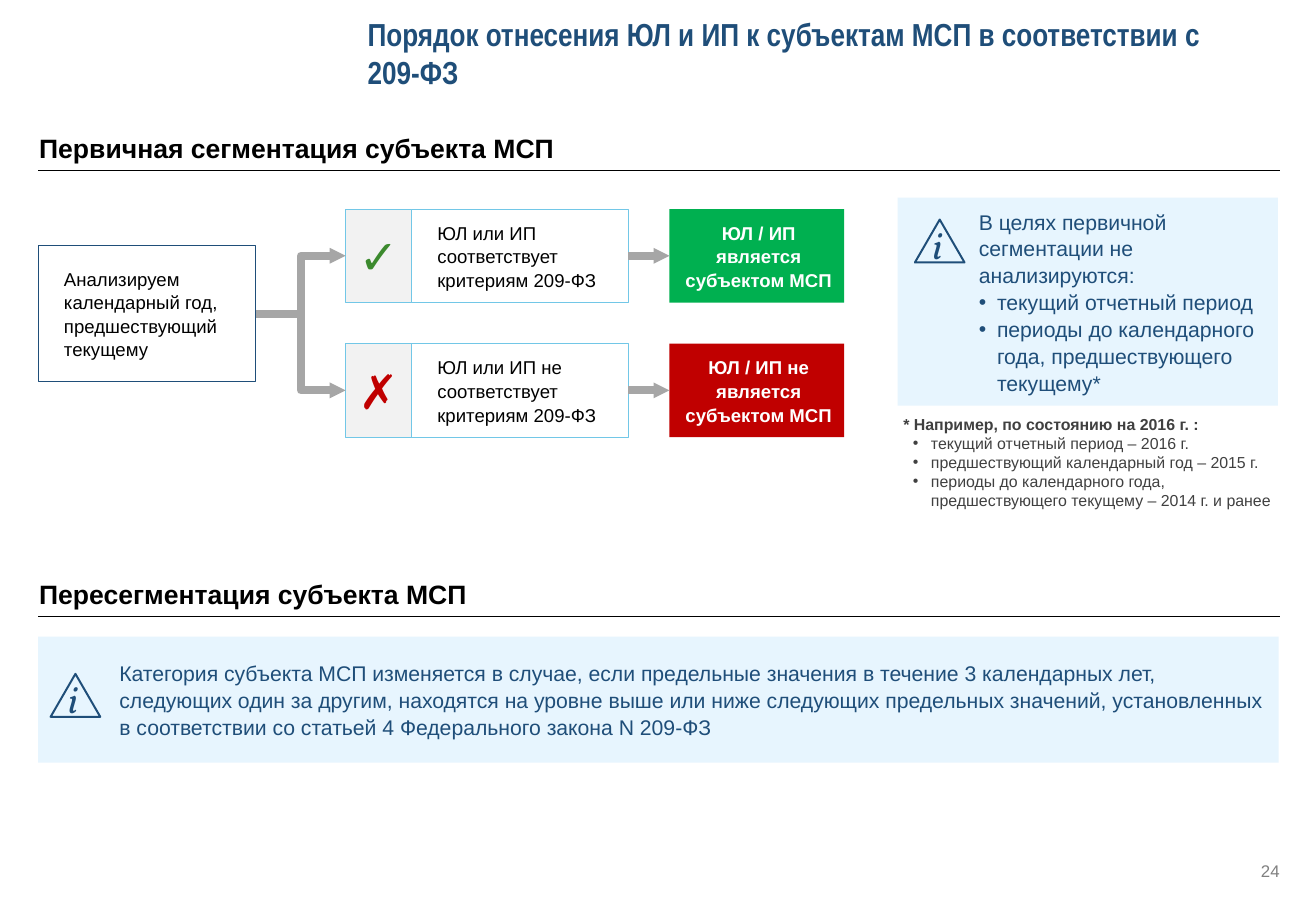
from lxml import etree
from pptx import Presentation
from pptx.dml.color import RGBColor
from pptx.enum.shapes import MSO_CONNECTOR, MSO_SHAPE
from pptx.enum.text import MSO_ANCHOR, MSO_AUTO_SIZE, PP_ALIGN
from pptx.oxml.ns import qn
from pptx.util import Inches, Pt

STRAIGHT, ELBOW = MSO_CONNECTOR.STRAIGHT, MSO_CONNECTOR.ELBOW
RECTANGLE, TRIANGLE = MSO_SHAPE.RECTANGLE, MSO_SHAPE.ISOSCELES_TRIANGLE
TOP, MIDDLE, BOTTOM = MSO_ANCHOR.TOP, MSO_ANCHOR.MIDDLE, MSO_ANCHOR.BOTTOM
LEFT, CENTER, RIGHT = PP_ALIGN.LEFT, PP_ALIGN.CENTER, PP_ALIGN.RIGHT
FIT_SHAPE = MSO_AUTO_SIZE.SHAPE_TO_FIT_TEXT

BLACK = RGBColor(0x00, 0x00, 0x00)
WHITE = RGBColor(0xFF, 0xFF, 0xFF)
NAVY = RGBColor(0x1F, 0x4E, 0x79)
SKY = RGBColor(0x72, 0xC7, 0xE7)
PALE_BLUE = RGBColor(0xE7, 0xF5, 0xFE)
PALE_GRAY = RGBColor(0xF2, 0xF2, 0xF2)
ARROW_GRAY = RGBColor(0xA6, 0xA6, 0xA6)
NOTE_GRAY = RGBColor(0x40, 0x40, 0x40)
NUMBER_GRAY = RGBColor(0x80, 0x80, 0x80)
CHECK_GREEN = RGBColor(0x3C, 0x8A, 0x2E)
GREEN = RGBColor(0x00, 0xB0, 0x50)
RED = RGBColor(0xC0, 0x00, 0x00)

DEFAULT_INSETS = (0.1, 0.05, 0.1, 0.05)
NO_INSETS = (0, 0, 0, 0)
BOX_INSETS = (0.08, 0, 0.04, 0)
PANEL_INSETS = (0.16, 0, 0.04, 0)
ICON_INSETS = (0.04, 0.04, 0.04, 0.04)

BRANCHES = [
    (2.19, "✓", CHECK_GREEN, "ЮЛ или ИП соответствует критериям 209-ФЗ",
     GREEN, "ЮЛ / ИП является субъектом МСП"),
    (3.6, "✗", RED, "ЮЛ или ИП не соответствует критериям 209-ФЗ",
     RED, "ЮЛ / ИП не является субъектом МСП"),
]
EXCLUDED_PERIODS = [
    "В целях первичной сегментации не анализируются:",
    "текущий отчетный период",
    "периоды до календарного года, предшествующего текущему*",
]
EXAMPLE = [
    "* Например, по состоянию на 2016 г. :",
    "текущий отчетный период – 2016 г.",
    "предшествующий календарный год – 2015 г.",
    "периоды до календарного года, предшествующего текущему – 2014 г. и ранее",
]
RESEGMENTATION = (
    "Категория субъекта МСП изменяется в случае, если предельные значения в течение "
    "3 календарных лет, следующих один за другим, находятся на уровне выше или ниже "
    "следующих предельных значений, установленных в соответствии со статьей 4 "
    "Федерального закона N 209-ФЗ"
)


def set_indent(paragraph, margin, bullet):
    """Set the left margin and, if asked, a hanging bullet."""
    properties = paragraph._p.get_or_add_pPr()
    properties.set("marL", str(Inches(margin)))
    if bullet:
        properties.set("indent", str(Inches(-0.19)))
        etree.SubElement(properties, qn("a:buFont")).set("typeface", "Arial")
        etree.SubElement(properties, qn("a:buChar")).set("char", "•")


def write(shape, lines, size, color, font="Arial", bold=False, italic=False,
          align=LEFT, anchor=MIDDLE, insets=DEFAULT_INSETS, margin=0,
          bullet_margin=0, spacing=None, wrap=True):
    """Fill a shape with a lead paragraph and bulleted paragraphs after it."""
    frame = shape.text_frame
    frame.word_wrap = wrap
    frame.vertical_anchor = anchor
    (frame.margin_left, frame.margin_top,
     frame.margin_right, frame.margin_bottom) = map(Inches, insets)
    for index, line in enumerate(lines):
        paragraph = frame.add_paragraph() if index else frame.paragraphs[0]
        paragraph.text = line
        set_indent(paragraph, bullet_margin if index else margin, index > 0)
        paragraph.alignment = align
        if spacing:
            paragraph.line_spacing = spacing
        for run in paragraph.runs:
            run.font.name = font
            run.font.size = Pt(size)
            run.font.bold = bold and index == 0
            run.font.italic = italic
            run.font.color.rgb = color


def add_text(slide, left, top, width, height, lines, size, color, **style):
    """Add a text box."""
    shape = slide.shapes.add_textbox(*map(Inches, (left, top, width, height)))
    write(shape, lines, size, color, **style)
    return shape


def add_box(slide, left, top, width, height, fill=None, line=None,
            line_width=0.75, preset=RECTANGLE):
    """Add a flat shape with an optional fill and outline."""
    shape = slide.shapes.add_shape(preset, *map(Inches, (left, top, width, height)))
    shape.shadow.inherit = False
    if fill is None:
        shape.fill.background()
    else:
        shape.fill.solid()
        shape.fill.fore_color.rgb = fill
    if line is None:
        shape.line.fill.background()
    else:
        shape.line.color.rgb = line
        shape.line.width = Pt(line_width)
    return shape


def add_line(slide, kind, start, end, color, width):
    """Add a connector without a shadow."""
    connector = slide.shapes.add_connector(kind, *map(Inches, start + end))
    connector.line.color.rgb = color
    connector.line.width = Pt(width)
    etree.SubElement(connector._element.spPr, qn("a:effectLst"))
    return connector


def add_arrow(slide, kind, source, target):
    """Join the right side of one box to the left side of another."""
    arrow = add_line(slide, kind, (0, 0), (1, 1), ARROW_GRAY, 6)
    arrow.begin_connect(source, 3)
    arrow.end_connect(target, 1)
    outline = arrow.line._get_or_add_ln()
    etree.SubElement(outline, qn("a:round"))
    head = etree.SubElement(outline, qn("a:tailEnd"))
    for name, value in (("type", "triangle"), ("w", "sm"), ("len", "sm")):
        head.set(name, value)


def add_heading(slide, top, text):
    """Add a section heading with a rule under it."""
    add_text(slide, 0.41, top, 8.82, 0.79, [text], 20, BLACK,
             bold=True, anchor=BOTTOM, insets=NO_INSETS)
    rule = top + 0.86
    add_line(slide, STRAIGHT, (0.4, rule), (13.4, rule), BLACK, 0.75)


def add_panel(slide, left, top, width, height, lines):
    """Add a pale information panel."""
    panel = add_box(slide, left, top, width, height, PALE_BLUE)
    write(panel, lines, 16, NAVY, insets=PANEL_INSETS, margin=0.69,
          bullet_margin=0.88, spacing=1.06)


def add_information_sign(slide, left, top):
    """Add a triangle with the letter i."""
    add_box(slide, left, top, 0.52, 0.45, line=NAVY, line_width=1.5, preset=TRIANGLE)
    letter = add_text(slide, left + 0.08, top - 0.02, 0.31, 0.57, ["i"], 28, NAVY,
                      font="Vollkorn", italic=True, align=CENTER, anchor=TOP, wrap=False)
    letter.text_frame.auto_size = FIT_SHAPE


def add_branch(slide, period, top, mark, mark_color, criterion, result_color, result):
    """Add one outcome: mark, criterion and result, joined by arrows."""
    criterion_box = add_box(slide, 4.31, top, 2.27, 0.98, line=SKY)
    write(criterion_box, [criterion], 14, BLACK, insets=BOX_INSETS,
          margin=0.19, spacing=1.06)
    mark_box = add_box(slide, 3.62, top, 0.69, 0.98, PALE_GRAY, SKY)
    write(mark_box, [mark], 36, mark_color, align=CENTER, insets=ICON_INSETS)
    result_box = add_box(slide, 7.01, top, 1.83, 0.98, result_color)
    write(result_box, [result], 14, WHITE, bold=True, align=CENTER,
          insets=BOX_INSETS, spacing=1.06)
    add_arrow(slide, ELBOW, period, mark_box)
    add_arrow(slide, STRAIGHT, criterion_box, result_box)


def main():
    """Build the slide and save it."""
    presentation = Presentation()
    presentation.slide_width = Inches(13.78)
    presentation.slide_height = Inches(9.45)
    slide = presentation.slides.add_slide(presentation.slide_layouts[6])

    add_text(slide, 3.75, 0.17, 9.65, 0.76,
             ["Порядок отнесения ЮЛ и ИП к субъектам МСП в соответствии с\v209-ФЗ"],
             24, NAVY, font="Arial Narrow", bold=True)
    add_heading(slide, 0.93, "Первичная сегментация субъекта МСП")
    period = add_box(slide, 0.4, 2.57, 2.28, 1.43, line=NAVY)
    write(period, ["Анализируем календарный год, предшествующий текущему"], 14, BLACK,
          insets=BOX_INSETS, margin=0.19, spacing=1.06)
    for branch in BRANCHES:
        add_branch(slide, period, *branch)

    add_panel(slide, 9.4, 2.07, 3.98, 2.18, EXCLUDED_PERIODS)
    add_information_sign(slide, 9.58, 2.3)
    example = add_text(slide, 9.36, 4.29, 4.18, 1.11, EXAMPLE, 12, NOTE_GRAY,
                       bold=True, anchor=TOP, bullet_margin=0.29)
    example.text_frame.auto_size = FIT_SHAPE

    add_heading(slide, 5.6, "Пересегментация субъекта МСП")
    add_panel(slide, 0.4, 6.67, 12.99, 1.32, [RESEGMENTATION])
    add_information_sign(slide, 0.53, 7.06)
    add_text(slide, 12.98, 9.03, 0.42, 0.2, ["24"], 12.7, NUMBER_GRAY,
             align=RIGHT, anchor=TOP, insets=NO_INSETS, spacing=Pt(14.3))
    presentation.save("out.pptx")


if __name__ == "__main__":
    main()
